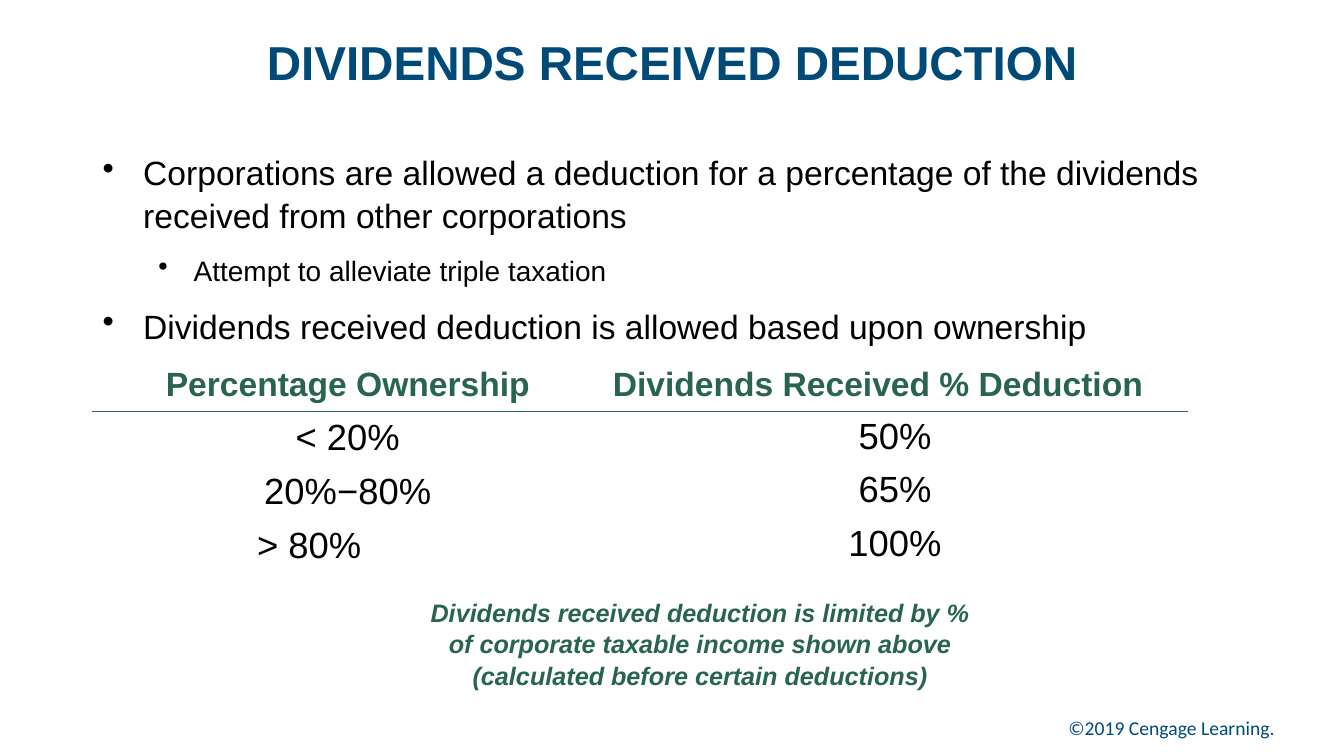
import pptx
import pptx.dml.color
import pptx.enum.text
import pptx.oxml
import pptx.oxml.ns
import pptx.util
from pptx.util import Cm

NAVY = pptx.dml.color.RGBColor(0x00, 0x4A, 0x78)
GREEN = pptx.dml.color.RGBColor(0x28, 0x64, 0x50)
BLACK = pptx.dml.color.RGBColor(0x00, 0x00, 0x00)
ALIGN = pptx.enum.text.PP_ALIGN
ANCHOR = pptx.enum.text.MSO_ANCHOR

LEFT = Cm(2.34)
WIDTH = Cm(29.21)

BULLETS = [
    (0, "Corporations are allowed a deduction for a percentage of the dividends "
        "received from other corporations"),
    (1, "Attempt to alleviate triple taxation"),
    (0, "Dividends received deduction is allowed based upon ownership"),
]
# Per level: text size, left margin, hanging indent
LEVELS = [(24, Cm(1.02), Cm(-1.02)), (20, Cm(2.29), Cm(-0.89))]

DEDUCTION_ROWS = [
    ("Percentage Ownership", "Dividends Received % Deduction"),
    ("< 20%", "50%"),
    ("20%−80%", "65%"),
    ("> 80%", "100%"),
]
LIMIT_NOTE = ("Dividends received deduction is limited by %\v"
              "of corporate taxable income shown above\v"
              "(calculated before certain deductions)")


def style(paragraph, size, color, bold=False, italic=False, name="Arial"):
    font = paragraph.font
    font.name, font.size = name, pptx.util.Pt(size)
    font.bold, font.italic = bold, italic
    font.color.rgb = color


def add_frame(slide, left, top, width, height, anchor=ANCHOR.TOP):
    frame = slide.shapes.add_textbox(left, top, width, height).text_frame
    frame.word_wrap = True
    frame.vertical_anchor = anchor
    return frame


def add_line(slide, text, box, align, anchor, **font):
    paragraph = add_frame(slide, *box, anchor).paragraphs[0]
    paragraph.text = text
    paragraph.alignment = align
    style(paragraph, **font)
    return paragraph


def add_bullets(slide, items, box):
    frame = add_frame(slide, *box)
    for index, (level, text) in enumerate(items):
        paragraph = frame.add_paragraph() if index else frame.paragraphs[0]
        size, margin, indent = LEVELS[level]
        paragraph.text = text
        paragraph.level = level
        paragraph.line_spacing = 1.05
        paragraph.space_before = pptx.util.Pt(6 if index else 0)
        paragraph.space_after = pptx.util.Pt(6)
        properties = paragraph._p.get_or_add_pPr()
        properties.set("marL", str(margin))
        properties.set("indent", str(indent))
        bullet = pptx.oxml.parse_xml(
            f'<a:buChar {pptx.oxml.ns.nsdecls("a")} char="•"/>')
        properties.append(bullet)
        style(paragraph, size, BLACK)


def add_border(cell, side):
    border = pptx.oxml.parse_xml(
        f'<a:{side} {pptx.oxml.ns.nsdecls("a")} w="12700"><a:solidFill>'
        f'<a:srgbClr val="{GREEN}"/></a:solidFill></a:{side}>')
    cell._tc.get_or_add_tcPr().insert(0, border)


def add_deduction_table(slide, rows, left, top, column_widths, header_height, row_height):
    height = header_height + row_height * (len(rows) - 1)
    table = slide.shapes.add_table(len(rows), len(column_widths), left, top,
                                   sum(column_widths), height).table
    table.first_row = table.horz_banding = False
    for column, width in zip(table.columns, column_widths):
        column.width = width
    for r, texts in enumerate(rows):
        table.rows[r].height = row_height if r else header_height
        for c, text in enumerate(texts):
            cell = table.cell(r, c)
            cell.fill.background()
            paragraph = cell.text_frame.paragraphs[0]
            paragraph.text = text
            paragraph.alignment = ALIGN.CENTER
            if r == 0:
                style(paragraph, 24, GREEN, bold=True)
                add_border(cell, "lnB")
            else:
                style(paragraph, 26, BLACK)
                if c == 0:
                    cell.vertical_anchor = ANCHOR.MIDDLE
                if r == 1:
                    add_border(cell, "lnT")
    table.cell(0, 1).text_frame.paragraphs[0].alignment = ALIGN.LEFT
    # The last ownership band sits left of centre
    table.cell(len(rows) - 1, 0).margin_right = Cm(2.2)


def main():
    presentation = pptx.Presentation()
    presentation.slide_width, presentation.slide_height = Cm(33.87), Cm(19.05)
    slide = presentation.slides.add_slide(presentation.slide_layouts[6])

    # Copyright line
    add_line(slide, "©2019 Cengage Learning.", (Cm(8.03), Cm(17.5), Cm(24.35), Cm(1.27)),
             ALIGN.RIGHT, ANCHOR.BOTTOM, size=14, color=NAVY, name="Calibri")

    # Title
    title = add_line(slide, "DIVIDENDS RECEIVED DEDUCTION", (LEFT, Cm(0.38), WIDTH, Cm(2.54)),
                     ALIGN.CENTER, ANCHOR.MIDDLE, size=34, color=NAVY, bold=True)
    title.line_spacing = 0.9

    # Explanation and deduction rates
    add_bullets(slide, BULLETS, (LEFT, Cm(3.66), WIDTH, Cm(5.08)))
    add_deduction_table(slide, DEDUCTION_ROWS, LEFT, Cm(9.09),
                        (Cm(12.85), Cm(14.73)), Cm(1.2), Cm(1.29))

    # Limitation note, centred right of its indent
    note = add_line(slide, LIMIT_NOTE, (LEFT + Cm(1.4), Cm(14.88), WIDTH - Cm(1.4), Cm(2.54)),
                    ALIGN.CENTER, ANCHOR.TOP, size=18, color=GREEN, bold=True, italic=True)
    note.line_spacing = 1.05

    presentation.save("out.pptx")


if __name__ == "__main__":
    main()
